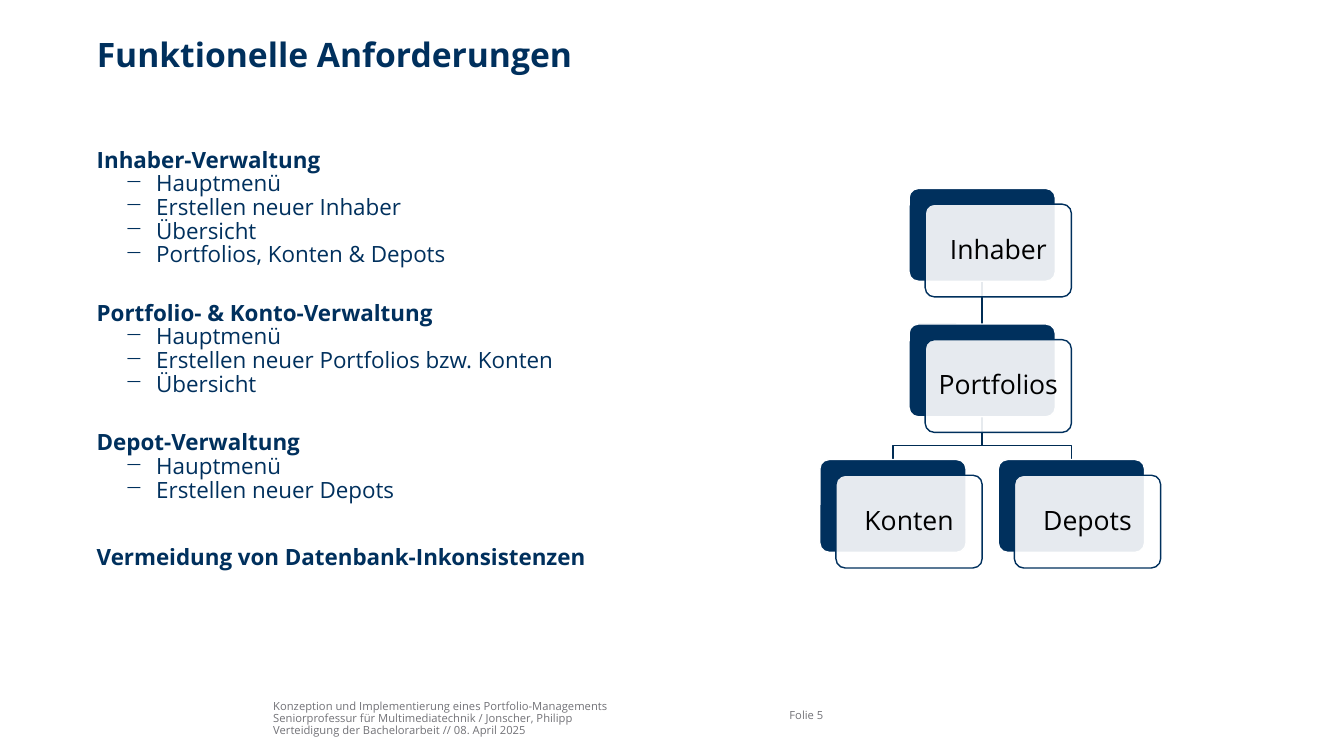
from lxml import etree
from pptx import Presentation
from pptx.dml.color import RGBColor
from pptx.enum.shapes import MSO_CONNECTOR, MSO_SHAPE
from pptx.enum.text import MSO_ANCHOR, PP_ALIGN
from pptx.oxml.ns import qn
from pptx.util import Inches, Pt

NAVY = RGBColor(0x00, 0x30, 0x5D)
LINE_NAVY = RGBColor(0x00, 0x2C, 0x54)
GREY = RGBColor(0x72, 0x72, 0x77)
WHITE = RGBColor(0xFF, 0xFF, 0xFF)
BLACK = RGBColor(0x00, 0x00, 0x00)

TOP, MIDDLE, BOTTOM = MSO_ANCHOR.TOP, MSO_ANCHOR.MIDDLE, MSO_ANCHOR.BOTTOM
CENTER = PP_ALIGN.CENTER
ROUNDED, STRAIGHT = MSO_SHAPE.ROUNDED_RECTANGLE, MSO_CONNECTOR.STRAIGHT

# Hierarchy measures, in percent of the slide's width or height
CARD_W, CARD_H = 10.88, 12.27
SHIFT_X, SHIFT_Y = 1.2, 2.07
TREE_LEFT, TREE_TOP = 61, 24.93
HALF_STEP, ROW_STEP = 6.64, 17.93
ELBOW_RISE = 1.87


class SlideBuilder:
    """Places elements by percent of the slide's size."""

    font = "Open Sans"

    def __init__(self, prs):
        self.unit_x = prs.slide_width / 100
        self.unit_y = prs.slide_height / 100
        self.shapes = prs.slides.add_slide(prs.slide_layouts[6]).shapes

    def point(self, x, y):
        return round(x * self.unit_x), round(y * self.unit_y)

    def box(self, x, y, w, h):
        return *self.point(x, y), *self.point(w, h)

    def run(self, paragraph, text, size, color, bold=False):
        run = paragraph.add_run()
        run.text = text
        run.font.name, run.font.size, run.font.bold = self.font, Pt(size), bold
        run.font.color.rgb = color

    def frame(self, shape, anchor, inset=0):
        frame = shape.text_frame
        frame.word_wrap = True
        frame.vertical_anchor = anchor
        frame.margin_left = frame.margin_right = Inches(inset)
        frame.margin_top = frame.margin_bottom = Inches(inset)
        return frame

    def text(self, area, lines, size, color, bold=False, anchor=TOP, spacing=0.88):
        frame = self.frame(self.shapes.add_textbox(*self.box(*area)), anchor)
        for index, line in enumerate(lines):
            paragraph = frame.paragraphs[0] if index == 0 else frame.add_paragraph()
            paragraph.line_spacing = spacing
            self.run(paragraph, line, size, color, bold)

    def outline(self, area, sections, size=16):
        frame = self.frame(self.shapes.add_textbox(*self.box(*area)), TOP)
        for index, (heading, gap, items) in enumerate(sections):
            paragraph = frame.paragraphs[0] if index == 0 else frame.add_paragraph()
            paragraph.line_spacing = 0.88
            if gap:
                paragraph.space_before = Pt(gap)
            self.run(paragraph, heading, size, NAVY, True)
            for item in items:
                self.bullet(frame.add_paragraph(), item, size)

    def bullet(self, paragraph, item, size):
        props = paragraph._p.get_or_add_pPr()
        props.set("marL", str(Inches(0.59)))
        props.set("indent", str(Inches(-0.31)))
        etree.SubElement(props, qn("a:buChar")).set("char", "−")
        paragraph.line_spacing = 0.88
        self.run(paragraph, item, size, NAVY)

    def panel(self, x, y, fill, line):
        panel = self.shapes.add_shape(ROUNDED, *self.box(x, y, CARD_W, CARD_H))
        panel.shadow.inherit = False
        panel.adjustments[0] = 0.1
        panel.fill.solid()
        panel.fill.fore_color.rgb = fill
        panel.line.color.rgb, panel.line.width = line, Pt(1)
        return panel

    def card(self, label, x, y):
        self.panel(x, y, NAVY, WHITE)
        front = self.panel(x + SHIFT_X, y + SHIFT_Y, WHITE, NAVY)
        white = front.fill._xPr.find(qn("a:solidFill"))[0]
        etree.SubElement(white, qn("a:alpha")).set("val", "90000")
        paragraph = self.frame(front, MIDDLE, 0.08).paragraphs[0]
        paragraph.alignment, paragraph.line_spacing = CENTER, 0.9
        self.run(paragraph, label, 19, BLACK)

    def link(self, parent, child):
        """Joins the foot of one card to the top of another."""
        start_x, end_x = parent[0] + CARD_W / 2, child[0] + CARD_W / 2
        start = self.point(start_x, parent[1] + CARD_H)
        end = self.point(end_x, child[1])
        if start_x == end_x:
            line = self.shapes.add_connector(STRAIGHT, *start, *end)
            etree.SubElement(line._element.spPr, qn("a:effectLst"))
        else:
            elbow_y = child[1] - ELBOW_RISE
            bends = [self.point(start_x, elbow_y), self.point(end_x, elbow_y)]
            path = self.shapes.build_freeform(*start)
            path.add_line_segments([*bends, end], close=False)
            line = path.convert_to_shape()
            line.fill.background()
            line.shadow.inherit = False
        line.line.color.rgb, line.line.width = LINE_NAVY, Pt(1)


def main():
    prs = Presentation()
    prs.slide_width, prs.slide_height = Inches(13.33), Inches(7.5)
    slide = SlideBuilder(prs)

    # Footer
    slide.text((20.33, 92.13, 36.76, 5.33), [
        "Konzeption und Implementierung eines Portfolio-Managements",
        "Seniorprofessur für Multimediatechnik / Jonscher, Philipp",
        "Verteidigung der Bachelorarbeit // 08. April 2025",
    ], 8, GREY, anchor=BOTTOM)
    slide.text((58.74, 92, 5.78, 5.33), ["Folie 5"], 8, GREY, anchor=MIDDLE)

    # Title
    slide.text((7.2, 5.07, 86.8, 10), ["Funktionelle Anforderungen"], 24, NAVY,
               bold=True, spacing=0.9)

    # Requirements: heading, space before in points, items
    slide.outline((7.2, 19.73, 42.6, 65.47), [
        ("Inhaber-Verwaltung", 0,
         ["Hauptmenü", "Erstellen neuer Inhaber", "Übersicht",
          "Portfolios, Konten & Depots"]),
        ("Portfolio- & Konto-Verwaltung", 25,
         ["Hauptmenü", "Erstellen neuer Portfolios bzw. Konten", "Übersicht"]),
        ("Depot-Verwaltung", 25, ["Hauptmenü", "Erstellen neuer Depots"]),
        ("Vermeidung von Datenbank-Inkonsistenzen", 31, []),
    ])

    # Hierarchy: half-step column and row of each card
    cells = {"Inhaber": (1, 0), "Portfolios": (1, 1),
             "Konten": (0, 2), "Depots": (2, 2)}
    places = {label: (TREE_LEFT + column * HALF_STEP, TREE_TOP + row * ROW_STEP)
              for label, (column, row) in cells.items()}
    for parent, child in [("Portfolios", "Depots"), ("Portfolios", "Konten"),
                          ("Inhaber", "Portfolios")]:
        slide.link(places[parent], places[child])
    for label, place in places.items():
        slide.card(label, *place)

    prs.save("out.pptx")


if __name__ == "__main__":
    main()
